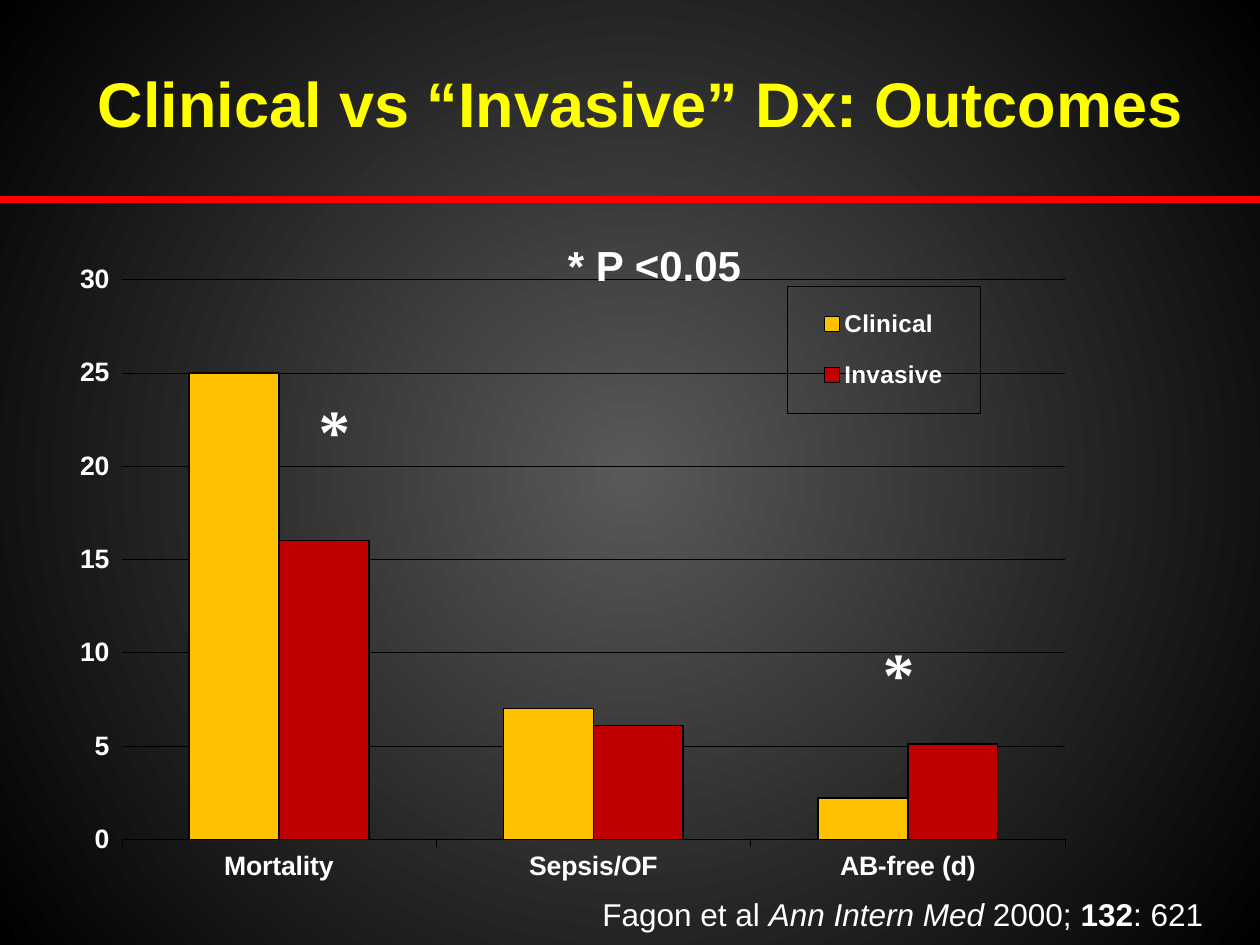
from dataclasses import dataclass

from lxml.etree import SubElement
from pptx import Presentation
from pptx.chart.data import CategoryChartData
from pptx.dml.color import RGBColor as RGB
from pptx.enum.chart import (XL_CHART_TYPE, XL_LEGEND_POSITION as LegendPos,
                             XL_TICK_LABEL_POSITION as LabelPos, XL_TICK_MARK as Tick)
from pptx.enum.text import MSO_ANCHOR, MSO_AUTO_SIZE, PP_ALIGN
from pptx.oxml.ns import qn
from pptx.util import Inches, Pt


@dataclass(frozen=True)
class Theme:
    sans: str = "Arial"
    serif: str = "Times New Roman"
    text: RGB = RGB(255, 255, 255)
    title: RGB = RGB(255, 255, 0)
    rule: RGB = RGB(255, 0, 0)
    line: RGB = RGB(0, 0, 0)
    glow: RGB = RGB(0x59, 0x59, 0x59)
    edge: RGB = RGB(0, 0, 0)
    bars: tuple = (RGB(0xFF, 0xC0, 0), RGB(0xC0, 0, 0))
    title_size: float = 36
    star_size: float = 36
    note_size: float = 24
    cite_size: float = 18
    axis_size: float = 15.2
    legend_size: float = 13.9


T = Theme()


def style_font(font, size, color=T.text, bold=True, name=T.sans):
    font.name, font.size, font.bold = name, Pt(size), bold
    font.color.rgb = color


def add_run(p, text, size, italic=False, **style):
    r = p.add_run()
    r.text = text
    style_font(r.font, size, **style)
    r.font.italic = italic


def place(sp, box):
    sp.left, sp.top, sp.width, sp.height = map(Inches, box)


def add_background(s):
    """Radial gradient, light in the middle."""
    fill = s.background.fill
    fill.gradient()
    for stop, color, pos in zip(fill.gradient_stops, (T.glow, T.edge), (0, 1)):
        stop.color.rgb, stop.position = color, pos
    grad = s.background._cSld.find(".//" + qn("a:gradFill"))
    grad.remove(grad.find(qn("a:lin")))
    radial = SubElement(grad, qn("a:path"), {"path": "circle"})
    SubElement(radial, qn("a:fillToRect"), dict.fromkeys("ltrb", "50000"))


def add_title(s, box, text):
    sp = s.shapes.title
    place(sp, box)
    tf = sp.text_frame
    tf.vertical_anchor, tf.word_wrap = MSO_ANCHOR.BOTTOM, True
    tf.auto_size = MSO_AUTO_SIZE.NONE
    p = tf.paragraphs[0]
    p.alignment = PP_ALIGN.CENTER
    add_run(p, text, T.title_size, color=T.title)


def add_rule(s, y):
    ln = s.shapes.add_connector(1, 0, Inches(y), Inches(10), Inches(y))
    ln.line.color.rgb, ln.line.width = T.rule, Pt(4)
    SubElement(ln._element.spPr, qn("a:effectLst"))


def add_text(s, box):
    """Centred text box; returns its paragraph."""
    sp = s.shapes.add_textbox(*map(Inches, box))
    sp.text_frame.word_wrap = True
    p = sp.text_frame.paragraphs[0]
    p.alignment = PP_ALIGN.CENTER
    return p


def add_citation(s, box):
    p = add_text(s, box)
    p.line_spacing = 1.6
    p._p.get_or_add_pPr().set("marL", str(Inches(0.5)))
    for text, bold, italic in (("Fagon et al ", False, False),
                               ("Ann Intern Med", False, True),
                               (" 2000; ", False, False),
                               ("132", True, False),
                               (": 621", False, False)):
        add_run(p, text, T.cite_size, bold=bold, italic=italic)


def set_layout(part, x, y, w, h, inner=False):
    """Fix a chart part at fractions of the chart area."""
    layout = part.find(qn("c:layout"))
    if layout is None:
        layout = part.makeelement(qn("c:layout"))
        part.insert(1 if part.tag == qn("c:legend") else 0, layout)
    manual = SubElement(layout, qn("c:manualLayout"))
    values = {"xMode": "edge", "yMode": "edge", "x": x, "y": y, "w": w, "h": h}
    if inner:
        values = {"layoutTarget": "inner", **values}
    for key, value in values.items():
        SubElement(manual, qn("c:" + key), {"val": str(value)})


def add_outcome_chart(s, box):
    data = CategoryChartData()
    data.categories = ["Mortality", "Sepsis/OF", "AB-free (d)"]
    data.add_series("Clinical", (25, 7, 2.2))
    data.add_series("Invasive", (16, 6.1, 5.1))
    chart = s.shapes.add_chart(XL_CHART_TYPE.COLUMN_CLUSTERED,
                               *map(Inches, box), data).chart
    chart.has_title = False
    style_font(chart.font, T.axis_size)

    # Bars
    plot = chart.plots[0]
    plot.gap_width, plot.overlap, plot.vary_by_categories = 150, 0, False
    for series, color in zip(plot.series, T.bars):
        series.format.fill.solid()
        series.format.fill.fore_color.rgb = color
        series.format.line.color.rgb = T.line
        series.format.line.width = Pt(0.84)
    set_layout(chart._chartSpace.chart.plotArea, 0.06, 0.03, 0.78, 0.84, inner=True)

    # Axes
    cat, val = chart.category_axis, chart.value_axis
    for axis in (cat, val):
        axis.major_tick_mark, axis.minor_tick_mark = Tick.OUTSIDE, Tick.NONE
        style_font(axis.tick_labels.font, T.axis_size)
    cat.tick_label_position = LabelPos.LOW
    val.minimum_scale, val.maximum_scale, val.major_unit = 0, 30, 5
    val.format.line.fill.background()
    for line in (cat.format.line, val.major_gridlines.format.line):
        line.color.rgb, line.width = T.line, Pt(0.21)

    # Legend with a thin frame
    chart.has_legend = True
    legend = chart.legend
    legend.position, legend.include_in_layout = LegendPos.RIGHT, True
    style_font(legend.font, T.legend_size)
    el = legend._element
    set_layout(el, 0.61, 0.04, 0.16, 0.19)
    frame = el.makeelement(qn("c:spPr"))
    el.find(qn("c:txPr")).addprevious(frame)
    ln = SubElement(frame, qn("a:ln"), {"w": str(Pt(0.21))})
    SubElement(SubElement(ln, qn("a:solidFill")), qn("a:srgbClr"), {"val": str(T.line)})


def main():
    prs = Presentation()
    prs.slide_width, prs.slide_height = Inches(10), Inches(7.5)
    s = prs.slides.add_slide(prs.slide_layouts[5])
    add_background(s)
    add_rule(s, 1.58)
    add_title(s, (0.17, -0.42, 9.83, 1.58), "Clinical vs “Invasive” Dx: Outcomes")
    add_outcome_chart(s, (0.39, 2.06, 9.6, 5.29))

    # Significance marks and their key
    for x, y in ((2.43, 3.06), (6.91, 4.99)):
        add_run(add_text(s, (x, y, 0.44, 0.7)), "*", T.star_size, name=T.serif)
    add_run(add_text(s, (3.91, 1.85, 2.57, 0.5)), "* P <0.05", T.note_size)
    add_citation(s, (3.35, 6.87, 7.13, 0.52))
    prs.save("out.pptx")


if __name__ == "__main__":
    main()
